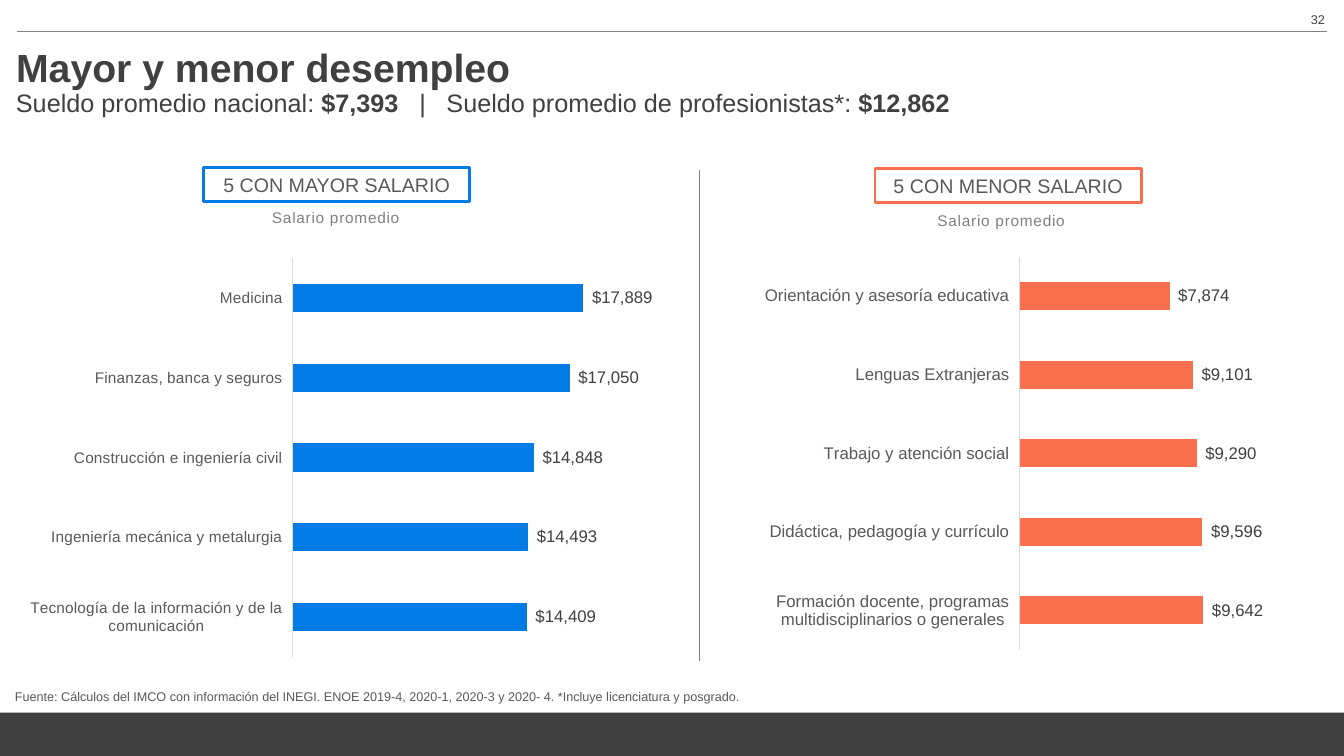
"""Build the slide on the fields of study with the highest and lowest salaries."""
from dataclasses import dataclass

from lxml import etree
from pptx import Presentation
from pptx.chart.data import CategoryChartData
from pptx.dml.color import RGBColor
from pptx.enum.chart import XL_CHART_TYPE, XL_LABEL_POSITION, XL_TICK_LABEL_POSITION, XL_TICK_MARK
from pptx.enum.shapes import MSO_CONNECTOR, MSO_SHAPE
from pptx.enum.text import MSO_ANCHOR, MSO_AUTO_SIZE, PP_ALIGN
from pptx.oxml import parse_xml
from pptx.oxml.ns import nsdecls, qn
from pptx.slide import Slide
from pptx.text.text import Font, TextFrame
from pptx.util import Inches, Pt

BAR = XL_CHART_TYPE.BAR_CLUSTERED
OUTSIDE_END = XL_LABEL_POSITION.OUTSIDE_END
LABELS_LOW = XL_TICK_LABEL_POSITION.LOW
NO_TICK = XL_TICK_MARK.NONE
STRAIGHT = MSO_CONNECTOR.STRAIGHT
RECTANGLE = MSO_SHAPE.RECTANGLE
TOP, MIDDLE, BOTTOM = MSO_ANCHOR.TOP, MSO_ANCHOR.MIDDLE, MSO_ANCHOR.BOTTOM
NO_FIT = MSO_AUTO_SIZE.NONE
LEFT, CENTER, RIGHT = PP_ALIGN.LEFT, PP_ALIGN.CENTER, PP_ALIGN.RIGHT

FONT_NAME = "Arial"
MONEY = '_-"$"* #,##0_-;\\-"$"* #,##0_-;_-"$"* "-"'
COLORS = {
    "dark": "404040",
    "text": "595959",
    "gray": "808080",
    "axis": "D9D9D9",
    "blue": "027CE4",
    "orange": "F9704E",
}
Area = tuple[float, float, float, float]


@dataclass(frozen=True)
class Ranking:
    """A headed bar chart of five fields of study."""

    heading: str
    color: str
    outline: float
    heading_area: Area
    caption_area: Area
    chart_area: Area
    plot: Area
    axis_size: int
    maximum: int
    reverse: bool
    salaries: dict[str, int]


RANKINGS = (
    Ranking(
        "5 CON MAYOR SALARIO", "blue", 2, (2.02, 1.66, 2.64, 0.34), (2.59, 2.02, 1.48, 0.29),
        (0.24, 2.41, 6.28, 4.26), (0.425, 0.036, 0.515, 0.928), 11, 20000, True,
        {
            "Medicina": 17889,
            "Finanzas, banca y seguros": 17050,
            "Construcción e ingeniería civil": 14848,
            "Ingeniería mecánica y metalurgia": 14493,
            "Tecnología de la información y de la comunicación": 14409,
        },
    ),
    Ranking(
        "5 CON MENOR SALARIO", "orange", 1.75, (8.68, 1.67, 2.64, 0.34), (9.19, 2.05, 1.48, 0.29),
        (7.45, 2.37, 6.43, 4.26), (0.414, 0.042, 0.353, 0.915), 12, 12000, False,
        {
            "Formación docente, programas multidisciplinarios o generales": 9642,
            "Didáctica, pedagogía y currículo": 9596,
            "Trabajo y atención social": 9290,
            "Lenguas Extranjeras": 9101,
            "Orientación y asesoría educativa": 7874,
        },
    ),
)


def rgb(name: str) -> RGBColor:
    """Return the named colour."""
    return RGBColor.from_string(COLORS[name])


def style_font(font: Font, size: float, color: str, bold: bool = False) -> None:
    """Set the typeface, size, colour and weight of a font."""
    font.name = FONT_NAME
    font.size = Pt(size)
    font.bold = bold
    font.color.rgb = rgb(color)


def fill_frame(frame: TextFrame, text: str, size: float, color: str, align: PP_ALIGN = LEFT,
               anchor: MSO_ANCHOR = TOP, bold: bool = False) -> None:
    """Write one formatted paragraph in a text frame."""
    frame.text = text
    frame.word_wrap = True
    frame.auto_size = NO_FIT
    frame.vertical_anchor = anchor
    para = frame.paragraphs[0]
    para.alignment = align
    style_font(para.runs[0].font, size, color, bold)


def add_text(slide: Slide, area: Area, text: str, size: float, color: str,
             align: PP_ALIGN = LEFT, anchor: MSO_ANCHOR = TOP) -> TextFrame:
    """Add a text box and return its frame."""
    box = slide.shapes.add_textbox(*map(Inches, area))
    fill_frame(box.text_frame, text, size, color, align, anchor)
    return box.text_frame


def add_rule(slide: Slide, area: Area) -> None:
    """Add a thin gray line from the first point to the second."""
    rule = slide.shapes.add_connector(STRAIGHT, *map(Inches, area))
    rule.line.color.rgb = rgb("gray")
    rule.line.width = Pt(0.75)
    etree.SubElement(rule.element.spPr, qn("a:effectLst"))


def add_averages(slide: Slide) -> None:
    """Add the line with the two average salaries."""
    frame = add_text(slide, (0.06, 0.82, 9.85, 0.4), "Sueldo promedio nacional: ", 18, "dark")
    para = frame.paragraphs[0]
    tabs = etree.SubElement(para._p.get_or_add_pPr(), qn("a:tabLst"))
    for position in (4.0, 4.27):
        etree.SubElement(tabs, qn("a:tab"), pos=str(Inches(position)), algn="l")
    for text, bold in (
        ("$7,393", True),
        ("\t|\tSueldo promedio de profesionistas*: ", False),
        ("$12,862", True),
    ):
        span = para.add_run()
        span.text = text
        style_font(span.font, 18, "dark", bold)


def add_heading(slide: Slide, ranking: Ranking) -> None:
    """Add the outlined heading and the caption of a ranking."""
    box = slide.shapes.add_shape(RECTANGLE, *map(Inches, ranking.heading_area))
    box.shadow.inherit = False
    box.fill.background()
    box.line.color.rgb = rgb(ranking.color)
    box.line.width = Pt(ranking.outline)
    fill_frame(box.text_frame, ranking.heading, 14, "text", CENTER, MIDDLE)
    caption = add_text(slide, ranking.caption_area, "Salario promedio", 11, "gray", CENTER)
    caption.word_wrap = False
    caption.paragraphs[0].runs[0].font._element.set("spc", "50")


def add_ranking_chart(slide: Slide, ranking: Ranking) -> None:
    """Add the bar chart of a ranking."""
    data = CategoryChartData(number_format=MONEY)
    data.categories = list(ranking.salaries)
    data.add_series("Salario promedio", list(ranking.salaries.values()))
    chart = slide.shapes.add_chart(BAR, *map(Inches, ranking.chart_area), data).chart
    chart.has_title = False
    chart.has_legend = False
    style_font(chart.font, 10, "text")

    category_axis = chart.category_axis
    category_axis.reverse_order = ranking.reverse
    category_axis.major_tick_mark = NO_TICK
    category_axis.minor_tick_mark = NO_TICK
    category_axis.tick_label_position = LABELS_LOW
    category_axis.format.line.color.rgb = rgb("axis")
    category_axis.format.line.width = Pt(0.75)
    style_font(category_axis.tick_labels.font, ranking.axis_size, "text")

    value_axis = chart.value_axis
    value_axis.visible = False
    value_axis.has_major_gridlines = False
    value_axis.minimum_scale = 0
    value_axis.maximum_scale = ranking.maximum

    plot = chart.plots[0]
    plot.gap_width = 182
    plot.vary_by_categories = False
    plot.has_data_labels = True
    labels = plot.data_labels
    labels.show_value = True
    labels.position = OUTSIDE_END
    labels.number_format = MONEY
    labels.number_format_is_linked = False
    style_font(labels.font, 12, "dark")
    fill = plot.series[0].format.fill
    fill.solid()
    fill.fore_color.rgb = rgb(ranking.color)

    settings = [("layoutTarget", "inner"), ("xMode", "edge"), ("yMode", "edge")]
    settings += zip("xywh", ranking.plot)
    content = "".join(f'<c:{name} val="{value}"/>' for name, value in settings)
    layout = parse_xml(
        f'<c:layout {nsdecls("c")}><c:manualLayout>{content}</c:manualLayout></c:layout>'
    )
    plot_area = chart._chartSpace.chart.plotArea
    for old_layout in plot_area.findall(qn("c:layout")):
        plot_area.remove(old_layout)
    plot_area.insert(0, layout)


def main() -> None:
    """Create and save the deck."""
    deck = Presentation()
    deck.slide_width, deck.slide_height = Inches(13.33), Inches(7.5)
    page = deck.slides.add_slide(deck.slide_layouts[5])

    band = page.shapes.add_shape(RECTANGLE, *map(Inches, (0, 7.07, 13.33, 0.43)))
    band.shadow.inherit = False
    band.fill.solid()
    band.fill.fore_color.rgb = rgb("dark")
    band.line.fill.background()
    add_rule(page, (0.17, 0.31, 13.16, 0.31))
    add_text(page, (10.24, 0.07, 3, 0.4), "32", 9, "dark", RIGHT)

    title = page.shapes.title
    title.left, title.top, title.width, title.height = map(Inches, (0.06, 0.36, 13.18, 0.6))
    fill_frame(title.text_frame, "Mayor y menor desempleo", 28, "dark", LEFT, MIDDLE, True)
    add_averages(page)
    add_text(
        page, (0.05, 6.76, 12.99, 0.27),
        "Fuente: Cálculos del IMCO con información del INEGI. ENOE 2019-4, 2020-1, 2020-3 y 2020- 4. "
        "*Incluye licenciatura y posgrado.",
        9, "text", LEFT, BOTTOM,
    )
    for ranking in RANKINGS:
        add_heading(page, ranking)
        add_ranking_chart(page, ranking)
    add_rule(page, (6.94, 1.69, 6.94, 6.56))
    deck.save("out.pptx")


if __name__ == "__main__":
    main()
